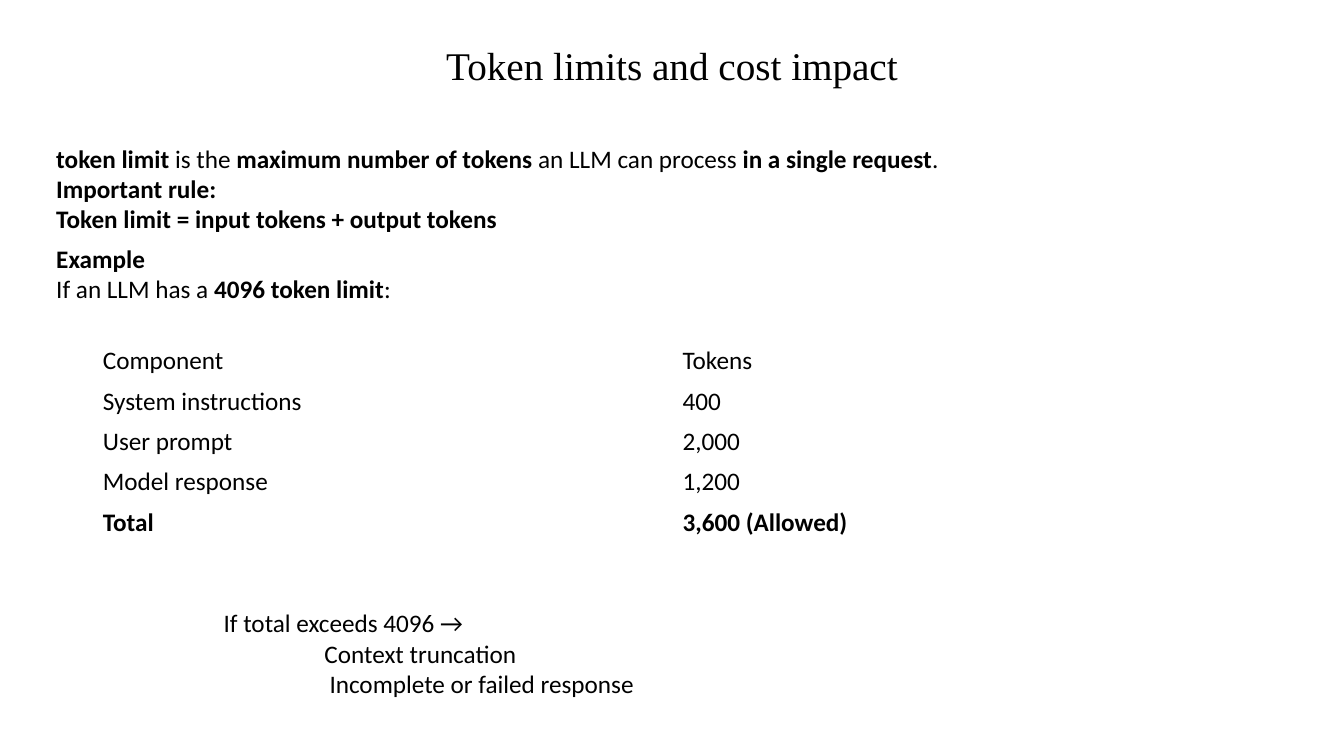
from dataclasses import dataclass

from pptx import Presentation
from pptx.dml.color import RGBColor
from pptx.enum.text import MSO_ANCHOR, MSO_AUTO_SIZE, PP_ALIGN
from pptx.util import Inches, Pt

INK = "000000"
BODY_FONT = "Calibri"
TITLE_FONT = "Times New Roman"


@dataclass(frozen=True)
class Span:
    text: str
    bold: bool = False


@dataclass(frozen=True)
class Line:
    spans: tuple[Span, ...]
    indent: float = 0


@dataclass(frozen=True)
class Passage:
    left: float
    top: float
    width: float
    height: float
    lines: tuple[Line, ...]


PASSAGES = (
    Passage(0.46, 1.37, 9.54, 1.11, (
        Line((
            Span("token limit", True),
            Span(" is the "),
            Span("maximum number of tokens", True),
            Span(" an LLM can process "),
            Span("in a single request", True),
            Span("."),
        )),
        Line((Span("Important rule:", True),)),
        Line((Span("Token limit = input tokens + output tokens", True),)),
    )),
    Passage(0.46, 2.36, 9.54, 0.71, (
        Line((Span("Example", True),)),
        Line((Span("If an LLM has a "), Span("4096 token limit", True), Span(":"))),
    )),
    Passage(2.12, 5.98, 6.67, 1.01, (
        Line((Span("If total exceeds 4096 →"),)),
        Line((Span("Context truncation"),), indent=1),
        Line((Span("Incomplete or failed response"),), indent=1.05),
    )),
)

TOKEN_BUDGET = (
    ("Component", "Tokens"),
    ("System instructions", "400"),
    ("User prompt", "2,000"),
    ("Model response", "1,200"),
    ("Total", "3,600 (Allowed)"),
)


def rgb(hex_color: str) -> RGBColor:
    return RGBColor.from_string(hex_color)


def add_span(paragraph, span: Span, font_name: str = BODY_FONT, size: int = 18) -> None:
    run = paragraph.add_run()
    run.text = span.text
    run.font.name = font_name
    run.font.size = Pt(size)
    run.font.bold = span.bold
    run.font.color.rgb = rgb(INK)


def set_title(slide, text: str) -> None:
    title = slide.shapes.title
    title.left, title.top = Inches(3.33), Inches(0.36)
    title.width, title.height = Inches(6.67), Inches(0.57)
    frame = title.text_frame
    frame.word_wrap = True
    frame.auto_size = MSO_AUTO_SIZE.SHAPE_TO_FIT_TEXT
    frame.vertical_anchor = MSO_ANCHOR.TOP
    heading = frame.paragraphs[0]
    heading.alignment = PP_ALIGN.CENTER
    add_span(heading, Span(text), TITLE_FONT, 28)


def add_passage(slide, passage: Passage) -> None:
    box = slide.shapes.add_textbox(
        Inches(passage.left), Inches(passage.top),
        Inches(passage.width), Inches(passage.height),
    )
    frame = box.text_frame
    frame.word_wrap = True
    frame.auto_size = MSO_AUTO_SIZE.SHAPE_TO_FIT_TEXT
    for number, line in enumerate(passage.lines):
        paragraph = frame.add_paragraph() if number else frame.paragraphs[0]
        if line.indent:
            paragraph._p.get_or_add_pPr().set("marL", str(Inches(line.indent)))
        for span in line.spans:
            add_span(paragraph, span)


def add_budget_table(slide, rows: tuple[tuple[str, str], ...]) -> None:
    table = slide.shapes.add_table(
        len(rows), len(rows[0]),
        Inches(0.92), Inches(3.38), Inches(11.5), Inches(0.4 * len(rows)),
    ).table
    table.first_row = False
    table.horz_banding = False
    for row_number, row in enumerate(rows):
        is_total = row_number == len(rows) - 1
        for column_number, text in enumerate(row):
            cell = table.cell(row_number, column_number)
            cell.fill.background()
            cell.vertical_anchor = MSO_ANCHOR.MIDDLE
            add_span(cell.text_frame.paragraphs[0], Span(text, is_total))


def main() -> None:
    deck = Presentation()
    deck.slide_width, deck.slide_height = Inches(13.33), Inches(7.5)
    slide = deck.slides.add_slide(deck.slide_layouts.get_by_name("Title Only"))
    set_title(slide, "Token limits and cost impact")
    for passage in PASSAGES:
        add_passage(slide, passage)
    add_budget_table(slide, TOKEN_BUDGET)
    deck.save("out.pptx")


if __name__ == "__main__":
    main()
